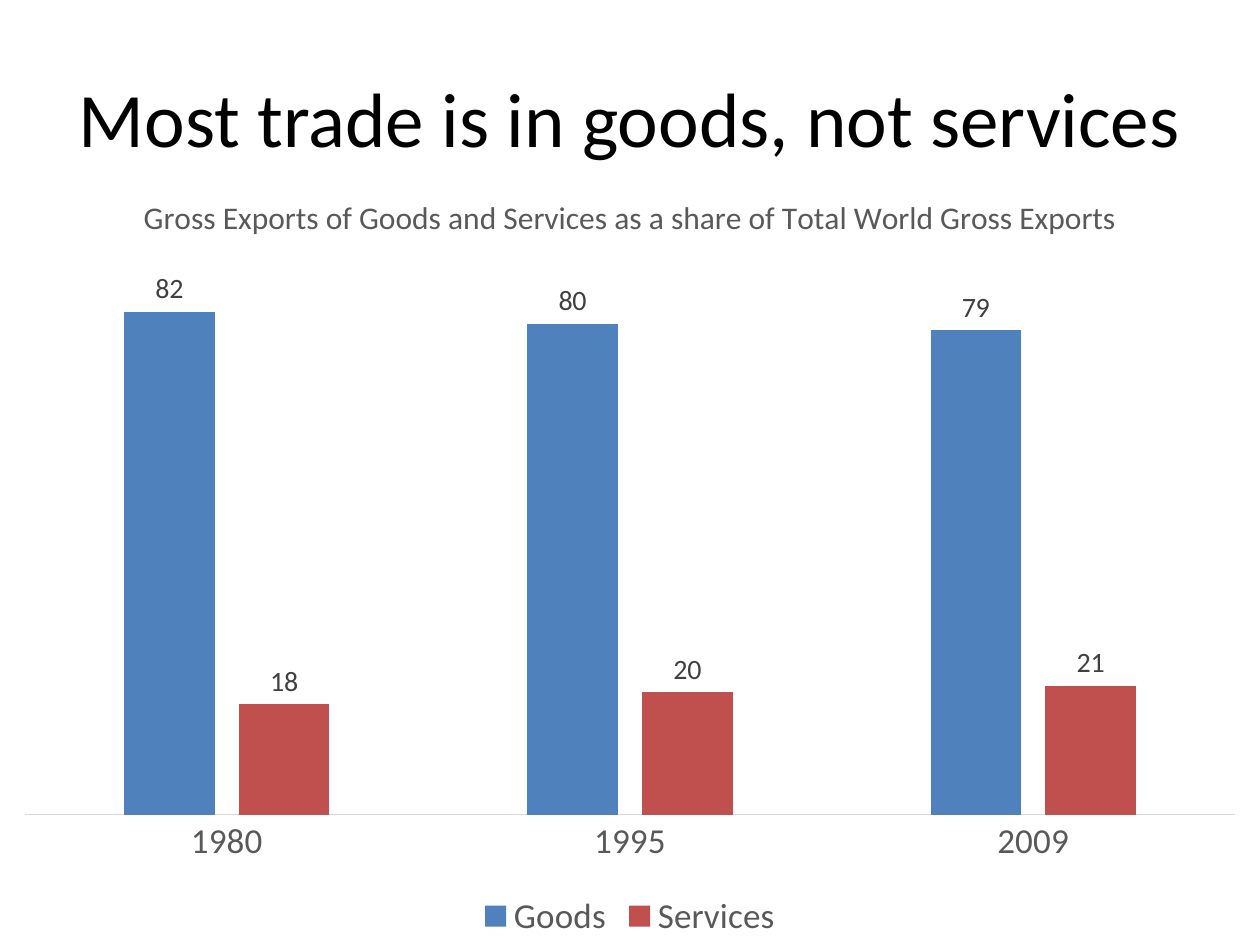
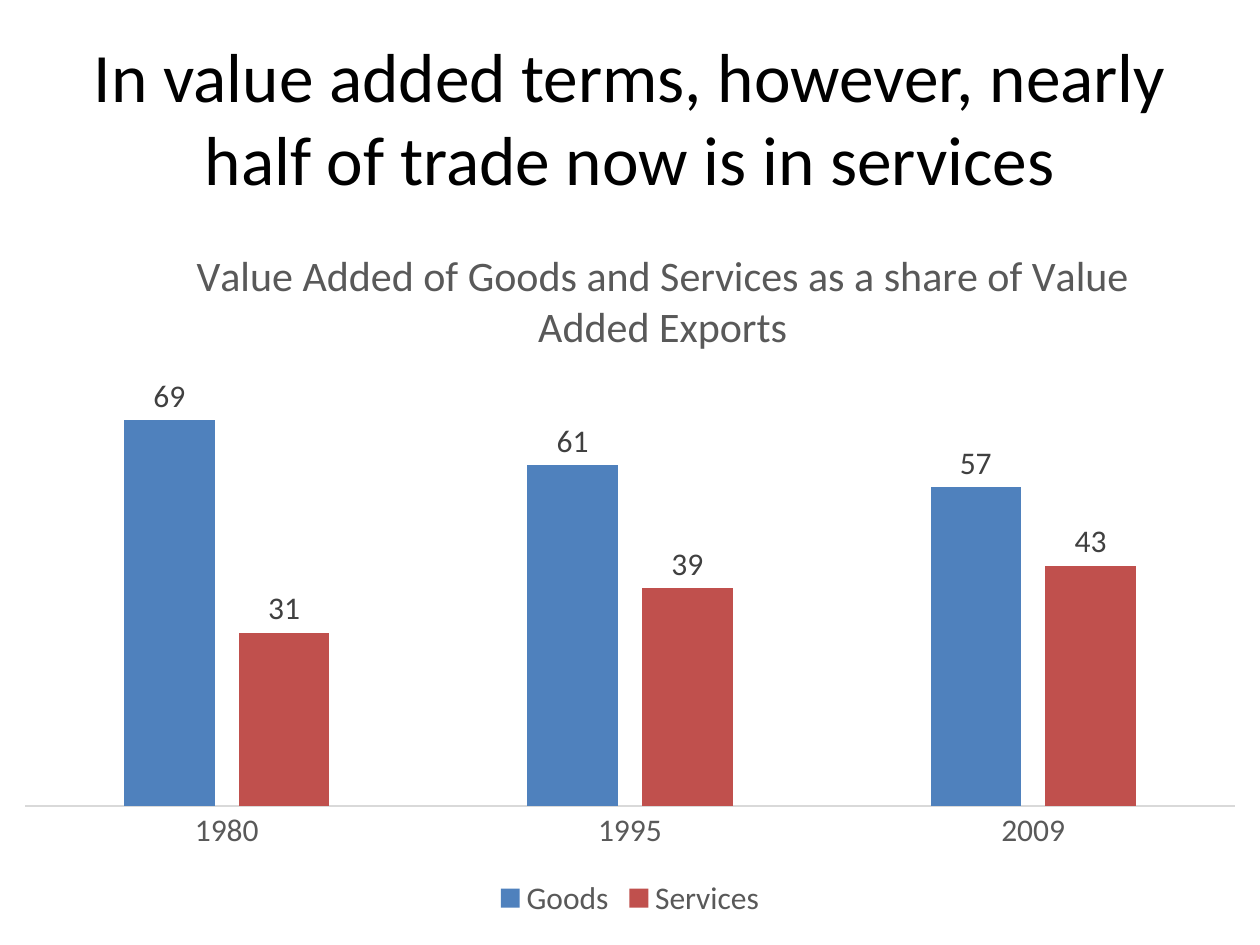
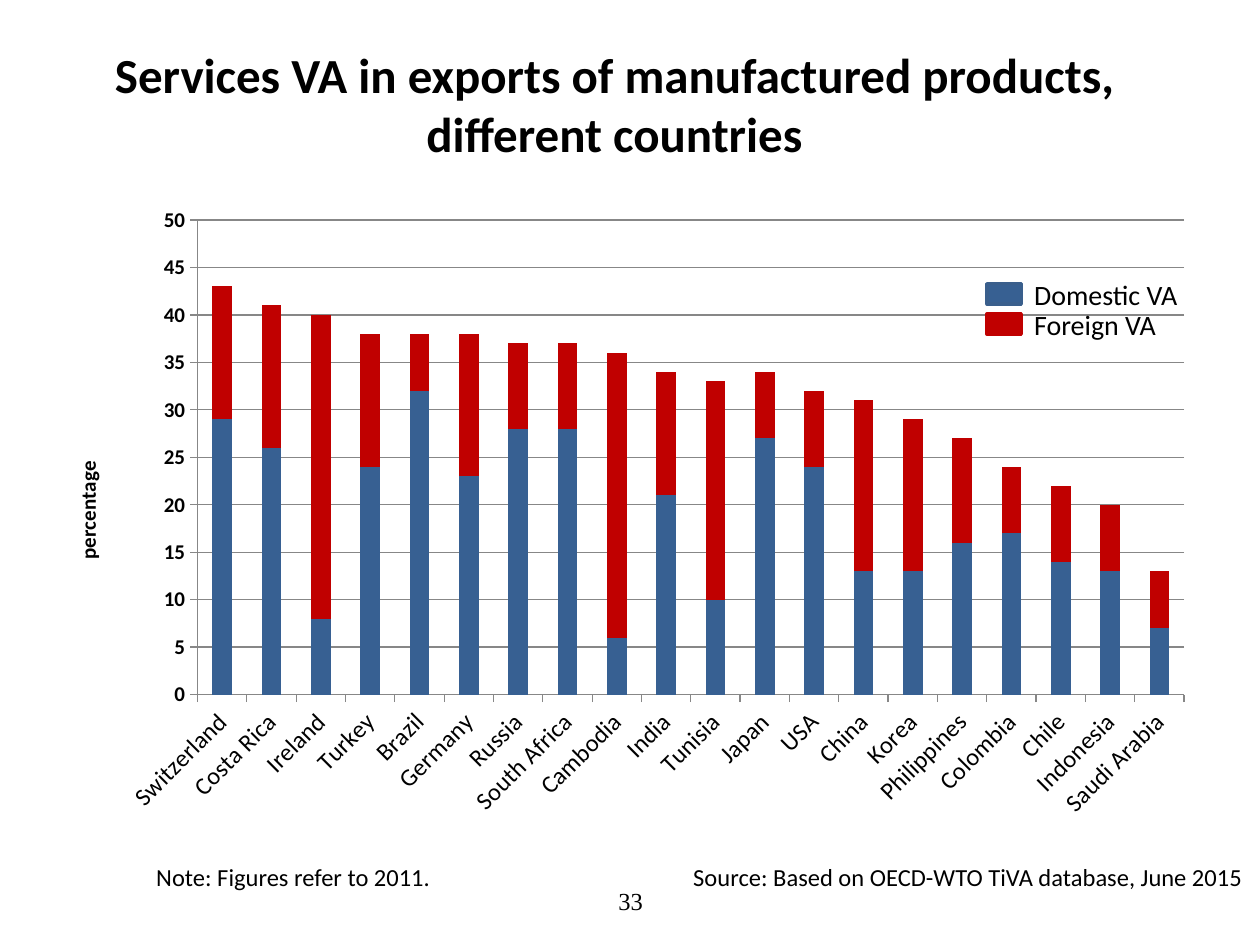
from lxml import etree
from pptx import Presentation
from pptx.chart.data import CategoryChartData
from pptx.dml.color import RGBColor
from pptx.enum.chart import XL_CHART_TYPE, XL_LABEL_POSITION, XL_LEGEND_POSITION, XL_TICK_MARK
from pptx.enum.shapes import MSO_SHAPE
from pptx.enum.text import MSO_ANCHOR, PP_ALIGN
from pptx.oxml.ns import qn
from pptx.util import Cm, Pt

CLUSTERED, STACKED = XL_CHART_TYPE.COLUMN_CLUSTERED, XL_CHART_TYPE.COLUMN_STACKED
OUTSIDE_END = XL_LABEL_POSITION.OUTSIDE_END
BOTTOM = XL_LEGEND_POSITION.BOTTOM
NO_TICK, TICK_OUT = XL_TICK_MARK.NONE, XL_TICK_MARK.OUTSIDE
RECTANGLE = MSO_SHAPE.RECTANGLE
TOP, MIDDLE = MSO_ANCHOR.TOP, MSO_ANCHOR.MIDDLE
LEFT, CENTER, RIGHT = PP_ALIGN.LEFT, PP_ALIGN.CENTER, PP_ALIGN.RIGHT
TITLE_ONLY = 5

FONT = "Calibri"
COLORS = {name: RGBColor.from_string(value) for name, value in {
    "text": "000000", "chart_text": "595959", "label": "404040",
    "axis": "D9D9D9", "grid": "878787",
    "goods": "4F81BD", "services": "C0504D",
    "domestic": "376092", "domestic_edge": "3A5F8C", "foreign": "C00000",
}.items()}


def write(frame, text, size, font=FONT, color="text", bold=False, align=LEFT, anchor=TOP):
    frame.word_wrap = True
    frame.vertical_anchor = anchor
    para = frame.paragraphs[0]
    para.alignment = align
    span = para.add_run()
    span.text = text
    span.font.name, span.font.size, span.font.bold = font, Pt(size), bold
    span.font.color.rgb = COLORS[color]


def set_layout(element, index, **fractions):
    """Place a chart part, as fractions of the chart; index is its layout's child position."""
    for old in element.findall(qn("c:layout")):
        element.remove(old)
    layout = etree.Element(qn("c:layout"))
    manual = etree.SubElement(layout, qn("c:manualLayout"))
    settings = {"xMode": "edge", "yMode": "edge", **fractions}
    if "w" in fractions:
        settings = {"layoutTarget": "inner", **settings}
    for key, value in settings.items():
        etree.SubElement(manual, qn(f"c:{key}")).set("val", str(value))
    element.insert(index, layout)


deck = Presentation()
deck.slide_width, deck.slide_height = Cm(25.4), Cm(19.05)

# Goods and services, gross and in value added
TRADE_PAGES = [
    {"title": "Most trade is in goods, not services", "title_size": 44,
     "chart_title": "Gross Exports of Goods and Services as a share of Total World Gross Exports",
     "chart_title_size": 18, "top": 3.38, "height": 15.67,
     "axis_size": 20, "label_size": 16, "maximum": 90,
     "goods": [82, 80, 79], "services": [18, 20, 21]},
    {"title": "In value added terms, however, nearly half of trade now is in services",
     "title_size": 39.6,
     "chart_title": "Value Added of Goods and Services as a share of Value Added Exports",
     "chart_title_size": 24, "chart_title_place": {"x": 0.15, "y": 0.06},
     "top": 3.94, "height": 14.68,
     "axis_size": 18, "label_size": 18, "maximum": 80,
     "goods": [69, 61, 57], "services": [31, 39, 43]},
]

for trade in TRADE_PAGES:
    page = deck.slides.add_slide(deck.slide_layouts[TITLE_ONLY])
    title = page.shapes.title
    title.left, title.top, title.width, title.height = Cm(1.27), Cm(0.76), Cm(22.86), Cm(3.18)
    write(title.text_frame, trade["title"], trade["title_size"], align=CENTER, anchor=MIDDLE)

    data = CategoryChartData(number_format="#,##0")
    data.categories = ["1980", "1995", "2009"]
    data.add_series("Goods", trade["goods"])
    data.add_series("Services", trade["services"])
    chart = page.shapes.add_chart(CLUSTERED, 0, Cm(trade["top"]), deck.slide_width,
                                  Cm(trade["height"]), data).chart
    chart.font.name, chart.font.size = FONT, Pt(10)
    write(chart.chart_title.text_frame, trade["chart_title"], trade["chart_title_size"],
          color="chart_text", align=CENTER)
    chart.chart_title.include_in_layout = False
    if "chart_title_place" in trade:
        set_layout(chart.chart_title._element, 1, **trade["chart_title_place"])

    chart.has_legend = True
    chart.legend.position = BOTTOM
    chart.legend.include_in_layout = False
    years, shares = chart.category_axis, chart.value_axis
    for font in (chart.legend.font, years.tick_labels.font):
        font.name, font.size = FONT, Pt(trade["axis_size"])
        font.color.rgb = COLORS["chart_text"]
    years.major_tick_mark = NO_TICK
    years.format.line.color.rgb = COLORS["axis"]
    years.format.line.width = Pt(0.75)
    shares.minimum_scale, shares.maximum_scale = 0, trade["maximum"]
    shares.has_major_gridlines = False
    shares.visible = False

    plot = chart.plots[0]
    plot.vary_by_categories = False
    plot.gap_width, plot.overlap = 219, -27
    for series, color in zip(plot.series, ("goods", "services")):
        series.format.fill.solid()
        series.format.fill.fore_color.rgb = COLORS[color]
        labels = series.data_labels
        labels.show_value = True
        labels.position = OUTSIDE_END
        labels.number_format, labels.number_format_is_linked = "#,##0", False
        labels.font.name, labels.font.size = FONT, Pt(trade["label_size"])
        labels.font.color.rgb = COLORS["label"]

# Services value added by country
COUNTRIES = [
    ("Switzerland", 29, 14), ("Costa Rica", 26, 15), ("Ireland", 8, 32), ("Turkey", 24, 14),
    ("Brazil", 32, 6), ("Germany", 23, 15), ("Russia", 28, 9), ("South Africa", 28, 9),
    ("Cambodia", 6, 30), ("India", 21, 13), ("Tunisia", 10, 23), ("Japan", 27, 7),
    ("USA", 24, 8), ("China", 13, 18), ("Korea", 13, 16), ("Philippines", 16, 11),
    ("Colombia", 17, 7), ("Chile", 14, 8), ("Indonesia", 13, 7), ("Saudi Arabia", 7, 6),
]
names, domestic, foreign = zip(*COUNTRIES)

page = deck.slides.add_slide(deck.slide_layouts[TITLE_ONLY])
title = page.shapes.title
title.left, title.top, title.width, title.height = Cm(1.27), Cm(0.76), Cm(22.23), Cm(2.64)
write(title.text_frame, "Services VA in exports of manufactured products, different countries",
      28, bold=True, align=CENTER, anchor=MIDDLE)

data = CategoryChartData(number_format="0")
data.categories = names
data.add_series("Series 1", domestic)
data.add_series("Series 2", foreign)
chart = page.shapes.add_chart(STACKED, Cm(0.94), Cm(3.92), Cm(23.4), Cm(12.93), data).chart
chart.has_title = chart.has_legend = False
chart.font.name, chart.font.size = FONT, Pt(10)
chart.font.color.rgb = COLORS["text"]
set_layout(chart._chartSpace.chart.plotArea, 0, x=0.13, y=0.04, w=0.85, h=0.74)

plot = chart.plots[0]
plot.vary_by_categories = False
plot.gap_width, plot.overlap = 150, 100
for series, color in zip(plot.series, ("domestic", "foreign")):
    series.format.fill.solid()
    series.format.fill.fore_color.rgb = COLORS[color]

countries, percentages = chart.category_axis, chart.value_axis
for axis, size in ((countries, 14), (percentages, 12)):
    axis.major_tick_mark = TICK_OUT
    axis.format.line.color.rgb = COLORS["grid"]
    axis.tick_labels.font.size = Pt(size)
countries._element.find(qn("c:txPr")).find(qn("a:bodyPr")).set("rot", "-2700000")
percentages.minimum_scale, percentages.maximum_scale, percentages.major_unit = 0, 50, 5
percentages.tick_labels.font.bold = True
percentages.tick_labels.number_format = "0"
percentages.tick_labels.number_format_is_linked = False
percentages.major_gridlines.format.line.color.rgb = COLORS["grid"]
axis_title = percentages.axis_title
write(axis_title.text_frame, "percentage", 12, bold=True)
body = axis_title.text_frame._txBody.find(qn("a:bodyPr"))
body.set("rot", "-5400000")
body.set("vert", "horz")
set_layout(axis_title._element, 1, x=0.02, y=0.41)

LEGEND_TOP, LEGEND_STEP = 5.47, 0.61
texts = [
    ("33", 8.69, 17.65, 8.05, 1.02,
     {"size": 14, "font": "Times New Roman", "align": CENTER, "anchor": MIDDLE}),
    ("Source: Based on OECD-WTO TiVA database, June 2015", 10.49, 17.25, 14.81, 0.86,
     {"size": 14, "align": RIGHT}),
    ("Note: Figures refer to 2011.", 2.9, 17.25, 7.21, 0.86, {"size": 14}),
]
for row, (name, fill, edge) in enumerate([("Domestic VA", "domestic", "domestic_edge"),
                                          ("Foreign VA", "foreign", "foreign")]):
    top = LEGEND_TOP + row * LEGEND_STEP
    key = page.shapes.add_shape(RECTANGLE, Cm(19.9), Cm(top + 0.25), Cm(0.69), Cm(0.41))
    key.shadow.inherit = False
    key.fill.solid()
    key.fill.fore_color.rgb = COLORS[fill]
    key.line.color.rgb = COLORS[edge]
    key.line.width = Pt(2)
    texts.append((name, 20.6, top, 3.71, 0.94, {"size": 16}))

for text, left, top, width, height, style in texts:
    box = page.shapes.add_textbox(Cm(left), Cm(top), Cm(width), Cm(height))
    write(box.text_frame, text, **style)

deck.save("out.pptx")
